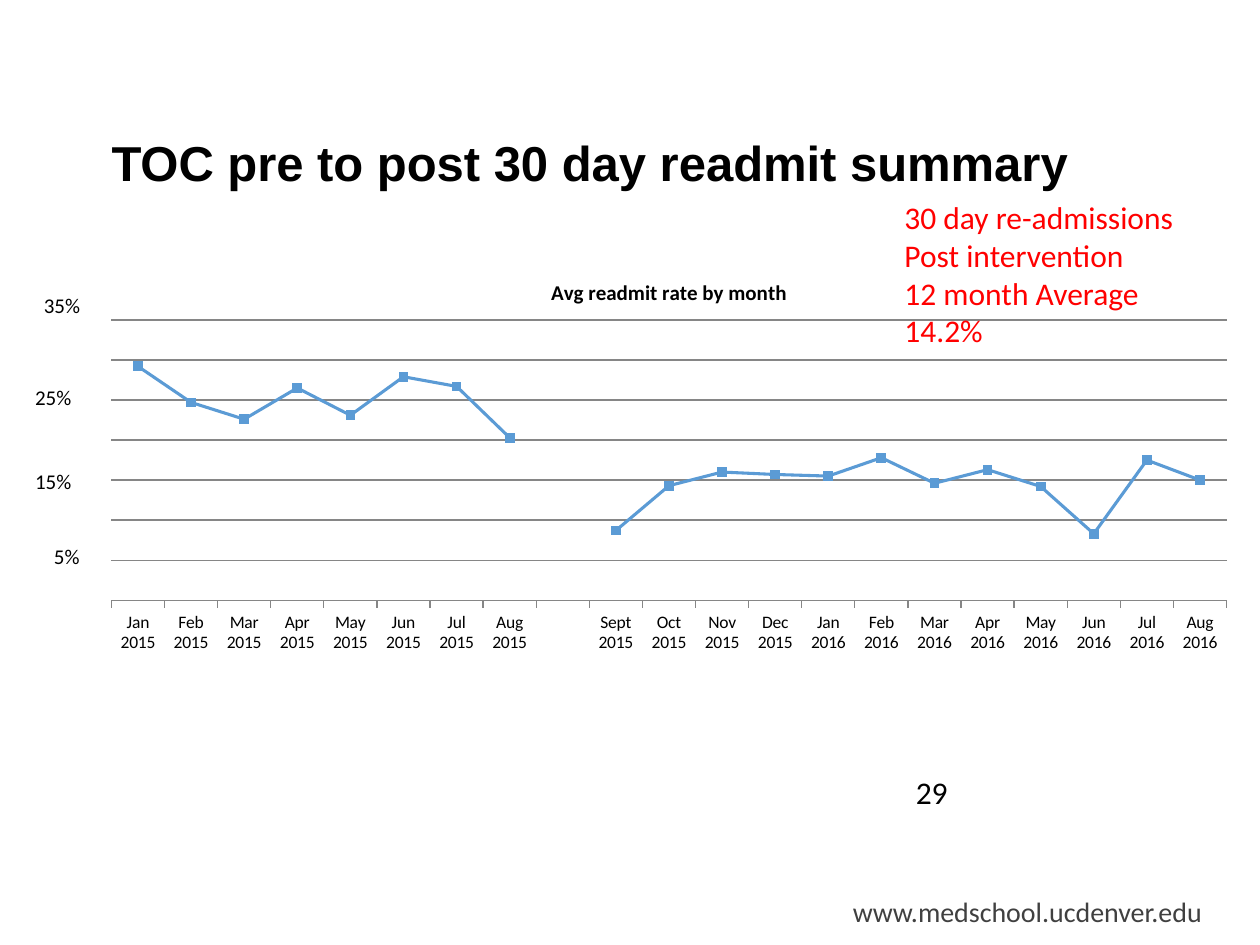
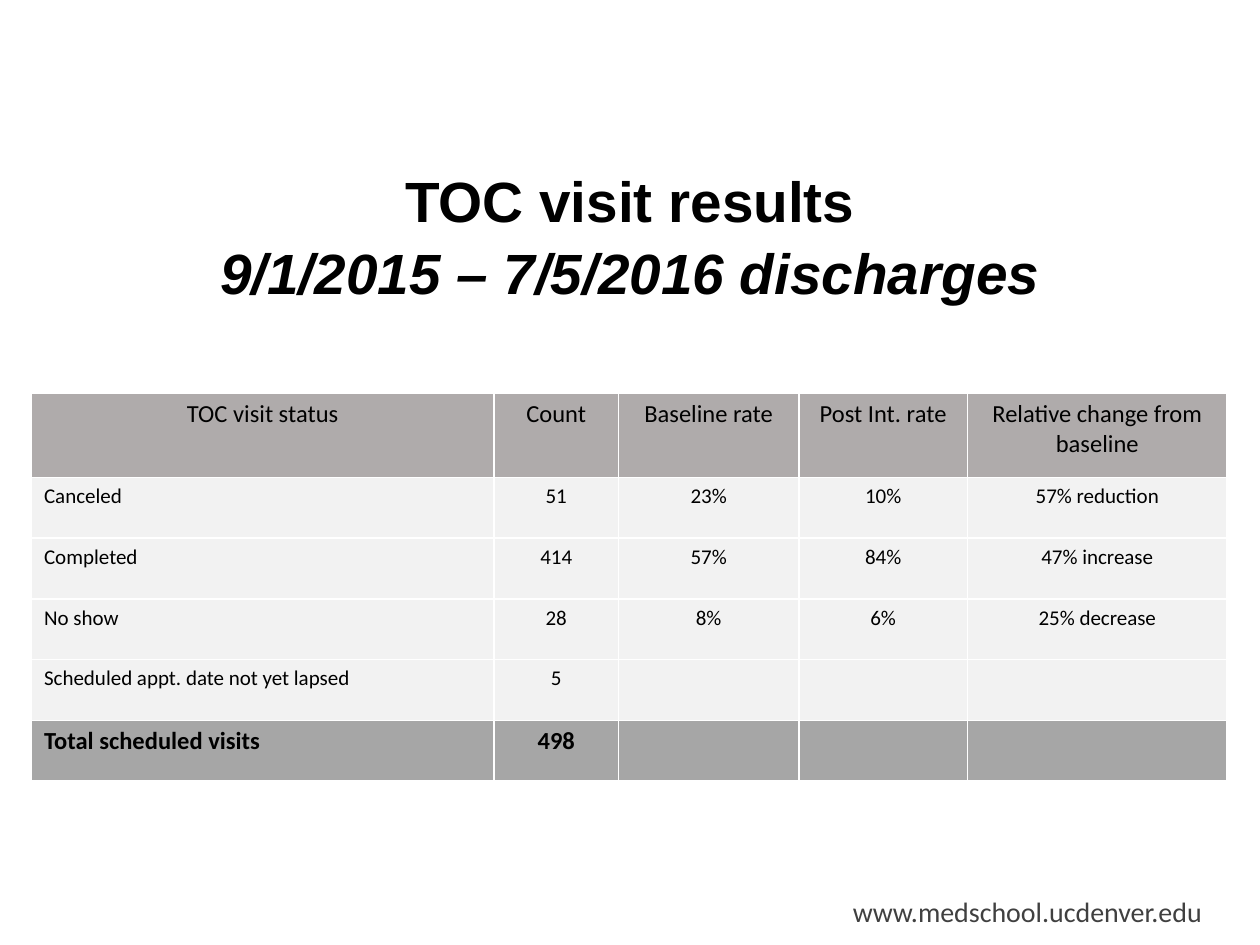
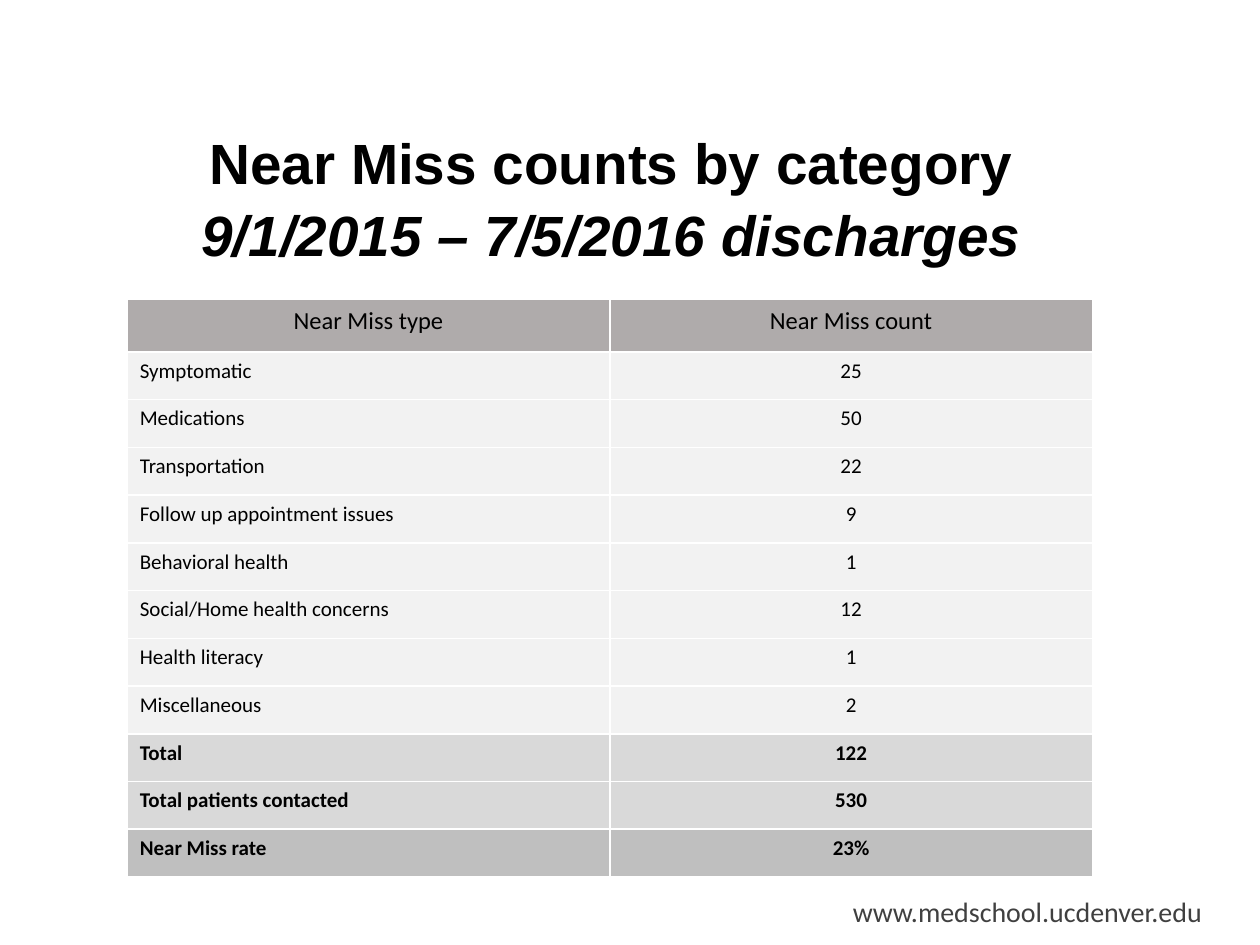
from lxml.etree import SubElement
from pptx import Presentation
from pptx.chart.data import CategoryChartData
from pptx.dml.color import RGBColor
from pptx.enum.chart import XL_CHART_TYPE, XL_MARKER_STYLE, XL_TICK_LABEL_POSITION, XL_TICK_MARK
from pptx.enum.text import MSO_ANCHOR, PP_ALIGN
from pptx.oxml.ns import qn
from pptx.util import Inches, Pt

BLACK, RED, BLUE = "000000", "FF0000", "5B9BD5"
GREY, RULE = "404040", "868686"
HEAD, PALE, MID, DARK, DEEP = "AFABAB", "F2F2F2", "D9D9D9", "BFBFBF", "A6A6A6"
hue = RGBColor.from_string

deck = Presentation()
deck.slide_width, deck.slide_height = Inches(10), Inches(7.5)
wide, high = deck.slide_width / 100, deck.slide_height / 100


def place(x, y, w, h):
    """Turn percentages of the slide into left, top, width and height."""
    return int(x * wide), int(y * high), int(w * wide), int(h * high)


def write(frame, text, size, tint=BLACK, face="Calibri", bold=False, align=PP_ALIGN.LEFT):
    frame.text = text
    for para in frame.paragraphs:
        para.alignment = align
        for run in para.runs:
            font = run.font
            font.name, font.size, font.bold = face, Pt(size), bold
            font.color.rgb = hue(tint)


# Title and footer of every slide: text, left, top, size
titles = [
    ("TOC pre to post 30 day readmit summary", 1.8, 10.1, 28),
    ("TOC visit results\v9/1/2015 – 7/5/2016 discharges", 5, 16.4, 32.4),
    ("Near Miss counts by category\v9/1/2015 – 7/5/2016 discharges", 3.5, 12.4, 32.4),
]
slides = []
for text, left, top, size in titles:
    slide = deck.slides.add_slide(deck.slide_layouts[6])
    slides.append(slide)
    foot = slide.shapes.add_textbox(*place(66.7, 94, 36.7, 4.9)).text_frame
    foot.word_wrap = True
    write(foot, "www.medschool.ucdenver.edu", 16, GREY)

    frame = slide.shapes.add_textbox(*place(left, top, 90, 16.7)).text_frame
    frame.word_wrap = True
    frame.vertical_anchor = MSO_ANCHOR.MIDDLE
    write(frame, text, size, face="Arial", bold=True, align=PP_ALIGN.CENTER)
    title = frame.paragraphs[0]
    if len(title.runs) > 1:
        title.line_spacing = 1.06
        title.runs[1].font.italic = True
    else:
        frame.margin_bottom = Inches(0.25)

# Slide 1: readmission rate by month
shapes = slides[0].shapes
months = "Jan Feb Mar Apr May Jun Jul Aug Sept Oct Nov Dec".split()
before = [f"{month} 2015" for month in months[:8]]
after = [f"{month} 2015" for month in months[8:]] + [f"{month} 2016" for month in months[:8]]
data = CategoryChartData(number_format="0.0%")
data.categories = before + [""] + after
data.add_series("Series 1", [
    0.292, 0.247, 0.226, 0.265, 0.231, 0.279, 0.267, 0.203, None,
    0.087, 0.143, 0.16, 0.157, 0.155, 0.178, 0.146, 0.163, 0.142, 0.083, 0.175, 0.15])
chart = shapes.add_chart(XL_CHART_TYPE.LINE_MARKERS, *place(7, 27.5, 92.2, 42.4), data).chart
chart.has_legend = False
chart.font.name, chart.font.size = "Calibri", Pt(10)
chart.font.color.rgb = hue(BLACK)
write(chart.chart_title.text_frame, "Avg readmit rate by month", 12, bold=True, align=PP_ALIGN.CENTER)

rate = chart.value_axis
rate.minimum_scale, rate.maximum_scale, rate.major_unit = 0, 0.35, 0.05
rate.tick_label_position = XL_TICK_LABEL_POSITION.NONE
rate.visible = False
rate.has_major_gridlines = True
time = chart.category_axis
time.major_tick_mark = XL_TICK_MARK.OUTSIDE
for line in (rate.major_gridlines.format.line, time.format.line):
    line.color.rgb = hue(RULE)
    line.width = Pt(0.75)

plot = chart.plots[0]
plot.vary_by_categories = False
curve = plot.series[0]
curve.smooth = False
curve.format.line.color.rgb = hue(BLUE)
curve.format.line.width = Pt(1.75)
curve.marker.style, curve.marker.size = XL_MARKER_STYLE.SQUARE, 5
curve.marker.format.fill.solid()
curve.marker.format.fill.fore_color.rgb = hue(BLUE)
curve.marker.format.line.color.rgb = hue(BLUE)

area = chart.element.chart.plotArea
for old in area.findall(qn("c:layout")):
    area.remove(old)
layout = SubElement(area, qn("c:layout"))
area.insert(0, layout)
manual = SubElement(layout, qn("c:manualLayout"))
for tag, value in [("layoutTarget", "inner"), ("xMode", "edge"), ("yMode", "edge"),
                   ("x", 0.02), ("y", 0.15), ("w", 0.96), ("h", 0.7)]:
    SubElement(manual, qn(f"c:{tag}")).set("val", str(value))

# Scale labels, note and page number: text, place, size, colour, wrap
notes = [
    ("29", (71.7, 81.1, 23.3, 5.3), 18, BLACK, True),
    ("5%", (3.3, 56.9, 5, 4), 12, BLACK, True),
    ("15%", (1.8, 48.9, 6.7, 4), 12, BLACK, True),
    ("25%", (1.8, 40, 6.7, 4), 12, BLACK, True),
    ("35%", (2.5, 30.3, 6.7, 4), 12, BLACK, True),
    ("30 day re-admissions\nPost intervention\n12 month Average 14.2%",
     (70.8, 20.3, 24.2, 10), 18, RED, False),
]
for text, spot, size, tint, wrap in notes:
    frame = shapes.add_textbox(*place(*spot)).text_frame
    frame.word_wrap = wrap
    write(frame, text, size, tint)

# Slides 2 and 3: each row is fill, size, bold and cell texts
visits = [
    (HEAD, 14, False, ["TOC visit status", "Count", "Baseline rate", "Post Int. rate",
                       "Relative change from baseline"]),
    (PALE, 12, False, ["Canceled", "51", "23%", "10%", "57% reduction"]),
    (PALE, 12, False, ["Completed", "414", "57%", "84%", "47% increase"]),
    (PALE, 12, False, ["No show", "28", "8%", "6%", "25% decrease"]),
    (PALE, 12, False, ["Scheduled appt. date not yet lapsed", "5", "", "", ""]),
    (DEEP, 14, True, ["Total scheduled visits", "498", "", "", ""]),
]
counts = [("Symptomatic", 25), ("Medications", 50), ("Transportation", 22),
          ("Follow up appointment issues", 9), ("Behavioral health", 1),
          ("Social/Home health concerns", 12), ("Health literacy", 1), ("Miscellaneous", 2)]
misses = [(HEAD, 14, False, ["Near Miss type", "Near Miss count"])]
misses += [(PALE, 12, False, [kind, str(count)]) for kind, count in counts]
misses += [
    (MID, 12, True, ["Total", "122"]),
    (MID, 12, True, ["Total patients contacted", "530"]),
    (DARK, 12, True, ["Near Miss rate", "23%"]),
]
# Slide, rows, left, top, column widths, heights of the head and of other rows
tables = [
    (slides[1], visits, 2.5, 41.6, [36.7, 9.9, 14.3, 13.4, 20.6], 8.93, 6.43),
    (slides[2], misses, 10.1, 31.7, [38.3, 38.3], 5.55, 5.05),
]
for slide, rows, left, top, widths, first, rest in tables:
    heights = [first] + [rest] * (len(rows) - 1)
    spot = place(left, top, sum(widths), sum(heights))
    table = slide.shapes.add_table(len(rows), len(widths), *spot).table
    table.horz_banding = False
    for column, width in zip(table.columns, widths):
        column.width = int(width * wide)
    for r, (fill, size, bold, texts) in enumerate(rows):
        table.rows[r].height = int(heights[r] * high)
        for c, text in enumerate(texts):
            cell = table.cell(r, c)
            cell.fill.solid()
            cell.fill.fore_color.rgb = hue(fill)
            align = PP_ALIGN.LEFT if r and not c else PP_ALIGN.CENTER
            write(cell.text_frame, text, size, bold=bold, align=align)

deck.save("out.pptx")
